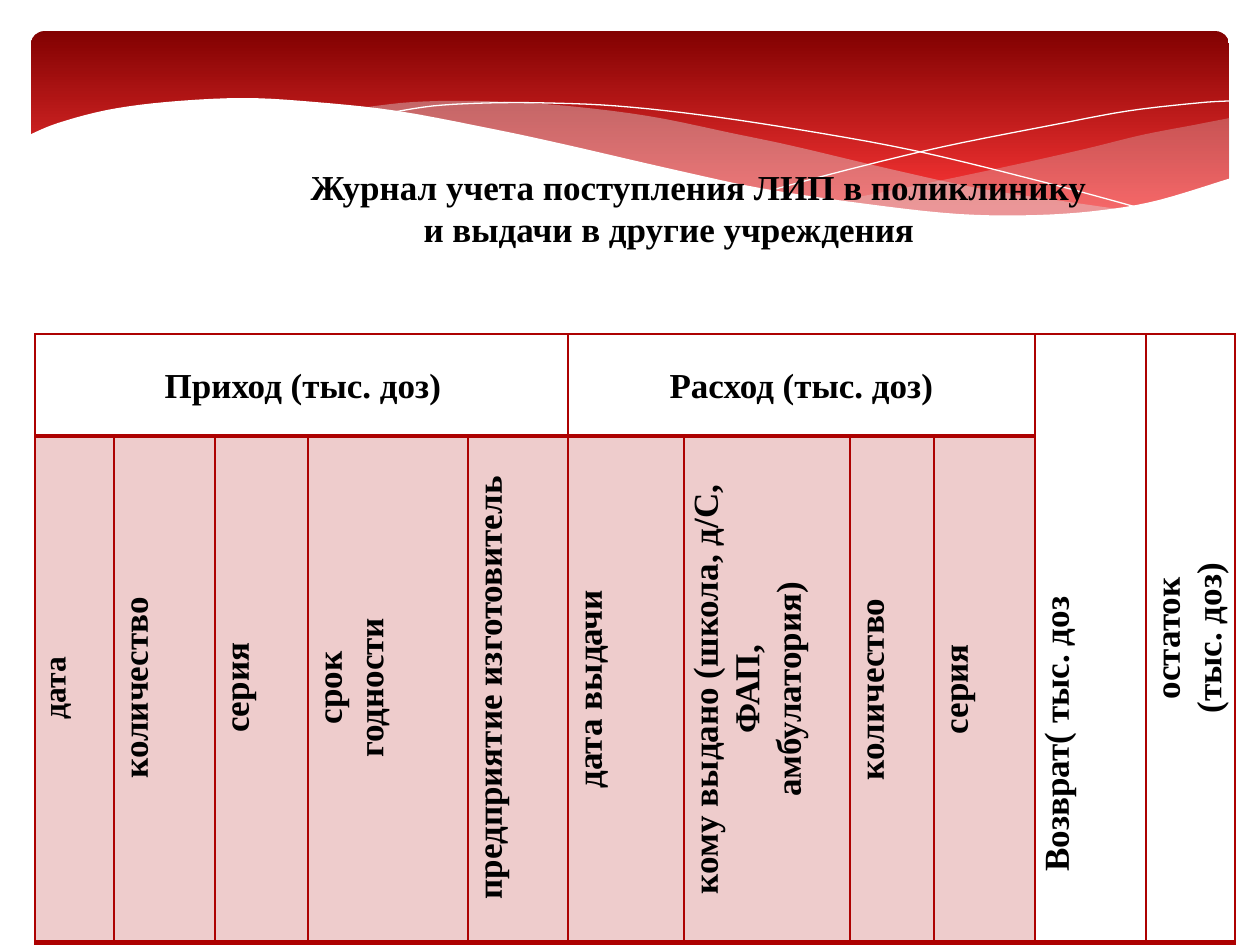
from lxml import etree
from pptx import Presentation
from pptx import util as u
from pptx.dml.color import RGBColor
from pptx.enum import text as t
from pptx.enum import shapes as s
from pptx.oxml import parse_xml
from pptx.oxml.ns import nsdecls, qn

PX = 914400 / 126
COLORS = {"dark": "820101", "bright": "FE3737", "rule": "AD0101",
          "veil": "DEDEE0", "white": "FFFFFF", "ink": "000000"}
CENTER, LEFT = t.PP_ALIGN.CENTER, t.PP_ALIGN.LEFT

RIGHT_VEIL_TOP = [(833, 202), (919, 185), (1014, 165), (1085, 149),
                  (1142, 135), (1194, 125), (1230, 118)]
RIGHT_VEIL_BOTTOM = [(1230, 178), (1187, 194), (1140, 205), (1076, 214),
                     (1012, 217), (939, 213), (871, 207), (833, 202)]
LONG_VEIL_TOP = [(360, 108), (413, 102), (479, 101), (557, 105), (648, 116),
                 (736, 134), (793, 146), (890, 169), (977, 188), (1055, 200),
                 (1125, 210)]
LONG_VEIL_BOTTOM = [(1125, 210), (1080, 215), (1031, 218), (974, 217),
                    (893, 209), (799, 197), (713, 180), (619, 159),
                    (538, 139), (456, 122), (407, 113), (360, 108)]
FALLING_LINE = [(389, 113), (433, 106), (488, 103), (546, 103), (616, 106),
                (701, 115), (801, 130), (916, 151), (1047, 183), (1143, 209)]
RISING_LINE = [(772, 190), (847, 170), (942, 147), (1053, 125), (1128, 111),
               (1198, 103), (1229, 101)]
WHITE_WAVE = [(29, 135), (58, 123), (107, 110), (166, 102), (243, 98),
              (315, 102), (398, 111), (493, 129), (563, 144), (667, 168),
              (760, 188), (867, 204), (959, 214), (1037, 215), (1103, 210),
              (1159, 200), (1231, 178)]

COLUMNS = [79, 101, 93, 160, 100, 116, 166, 84, 101, 111, 89]
ROWS = [102, 504, 54]
GROUPS = [(0, 0, 0, 4, ["Приход (тыс. доз)"], {"indent": 3}),
          (0, 5, 0, 8, ["Расход (тыс. доз)"], {}),
          (0, 9, 1, 9, ["Возврат( тыс. доз"], {"align": LEFT, "indent": 62}),
          (0, 10, 1, 10, ["остаток", "(тыс. доз)"], {})]
FIELDS = [["дата"], ["количество"], ["серия"], ["срок", "годности"],
          ["предприятие изготовитель"], ["дата выдачи"],
          ["кому выдано (школа, д/С, ФАП,", "амбулатория)"],
          ["количество"], ["серия"]]


def px(length):
    return u.Emu(round(length * PX))


def rgb(name):
    return RGBColor.from_string(COLORS[name])


def write(paragraph, words, size=20, align=CENTER, indent=0, spacing=1.0):
    run = paragraph.add_run()
    run.text = words
    run.font.size = u.Pt(size)
    run.font.name = "Times New Roman"
    run.font.bold = True
    run.font.color.rgb = rgb("ink")
    paragraph.alignment = align
    paragraph.line_spacing = spacing
    paragraph.space_before = u.Pt(0)
    paragraph._p.get_or_add_pPr().set("indent", str(px(indent)))


def write_lines(frame, lines, **style):
    for number, words in enumerate(lines):
        paragraph = frame.add_paragraph() if number else frame.paragraphs[0]
        write(paragraph, words, **style)


def paint(fill, color, alpha=100):
    fill.solid()
    fill.fore_color.rgb = rgb(color)
    if alpha < 100:
        srgb = fill._xPr.find(".//" + qn("a:srgbClr"))
        etree.SubElement(srgb, qn("a:alpha")).set("val", str(alpha * 1000))


def curve(knots, steps=5):
    padded = [knots[0], *knots, knots[-1]]
    points = []
    for a, b, c, d in zip(padded, padded[1:], padded[2:], padded[3:]):
        for step in range(steps):
            f = step / steps
            points.append(tuple(
                (2 * q + (r - p) * f + (2 * p - 5 * q + 4 * r - e) * f ** 2
                 + (3 * q - p - 3 * r + e) * f ** 3) / 2
                for p, q, r, e in zip(a, b, c, d)))
    return points + [knots[-1]]


def outline(slide, box, points, color, alpha=100, closed=True):
    placed = [(px(box[0] + x), px(box[1] + y)) for x, y in points]
    builder = slide.shapes.build_freeform(*placed[0], scale=1.0)
    builder.add_line_segments(placed[1:], close=closed)
    shape = builder.convert_to_shape()
    shape.shadow.inherit = False
    if closed:
        paint(shape.fill, color, alpha)
        shape.line.fill.background()
    else:
        shape.fill.background()
        shape.line.color.rgb = rgb(color)
        shape.line.width = u.Emu(0)


def banner(slide, box):
    left, top, width, height = box
    panel = slide.shapes.add_shape(
        s.MSO_SHAPE.ROUNDED_RECTANGLE, px(left + 31), px(top + 31),
        px(width - 62), px(height - 85))
    panel.adjustments[0] = 0.07
    panel.shadow.inherit = False
    panel.line.fill.background()
    panel.fill.gradient()
    panel.fill.gradient_angle = 270
    stops = zip(panel.fill.gradient_stops, (("dark", 0), ("bright", 0.9)))
    for stop, (color, position) in stops:
        stop.color.rgb = rgb(color)
        stop.position = position
    outline(slide, box, curve(RIGHT_VEIL_TOP) + curve(RIGHT_VEIL_BOTTOM), "veil", 29)
    outline(slide, box, curve(LONG_VEIL_TOP) + curve(LONG_VEIL_BOTTOM), "veil", 40)
    for strand in (FALLING_LINE, RISING_LINE):
        outline(slide, box, curve(strand), "white", closed=False)
    base = [(width - 29, height), (29, height)]
    outline(slide, box, curve(WHITE_WAVE) + base, "white")


def border(cell, **widths):
    properties = cell._tc.get_or_add_tcPr()
    for place, side in enumerate("LRTB"):
        properties.insert(place, parse_xml(
            f'<a:ln{side} {nsdecls("a")} w="{u.Pt(widths.get(side, 1))}">'
            f'<a:solidFill><a:srgbClr val="{COLORS["rule"]}"/></a:solidFill>'
            f'</a:ln{side}>'))


def fill_cell(cell, lines, vertical, **style):
    cell.vertical_anchor = t.MSO_ANCHOR.MIDDLE
    if vertical:
        cell._tc.get_or_add_tcPr().set("vert", "vert270")
    write_lines(cell.text_frame, lines, spacing=1.07, **style)


def journal(slide, box):
    table = slide.shapes.add_table(
        len(ROWS), len(COLUMNS), *map(px, box)).table
    table.first_row = table.horz_banding = False
    for column, width in zip(table.columns, COLUMNS):
        column.width = px(width)
    for row, height in zip(table.rows, ROWS):
        row.height = px(height)
    edges = [{"B": 2}, {"T": 2, "B": 4}, {"T": 4}]
    for r, widths in enumerate(edges):
        for c in range(len(COLUMNS)):
            cell = table.cell(r, c)
            cell.margin_left = cell.margin_right = px(9)
            cell.margin_top = cell.margin_bottom = 0
            if r == 1 and c < len(FIELDS):
                paint(cell.fill, "rule", 20)
            else:
                cell.fill.background()
            border(cell, **widths)
    for r, c, last_row, last_column, lines, style in GROUPS:
        cell = table.cell(r, c)
        cell.merge(table.cell(last_row, last_column))
        fill_cell(cell, lines, last_row > r, **style)
    for c, lines in enumerate(FIELDS):
        fill_cell(table.cell(1, c), lines, True, size=20 if c else 18,
                  indent=3 if c < 5 else 0)


def heading(slide, box):
    title = slide.shapes.title
    title.left, title.top, title.width, title.height = map(px, box)
    frame = title.text_frame
    frame.word_wrap = True
    frame.auto_size = t.MSO_AUTO_SIZE.NONE
    frame.vertical_anchor = t.MSO_ANCHOR.TOP
    frame.margin_left = frame.margin_right = frame.margin_bottom = 0
    frame.margin_top = px(10)
    write(frame.paragraphs[0], "Журнал учета поступления ЛИП в поликлинику", indent=62)
    write(frame.add_paragraph(), "и выдачи в другие учреждения", indent=3)
    slide.shapes.element.append(title.element)


def main():
    deck = Presentation()
    deck.slide_width, deck.slide_height = px(1260), px(945)
    slide = deck.slides.add_slide(deck.slide_layouts[5])
    banner(slide, (0, 0, 1260, 282))
    journal(slide, (35, 334, sum(COLUMNS), sum(ROWS)))
    heading(slide, (233, 155, 869, 165))
    deck.save("out.pptx")


if __name__ == "__main__":
    main()
